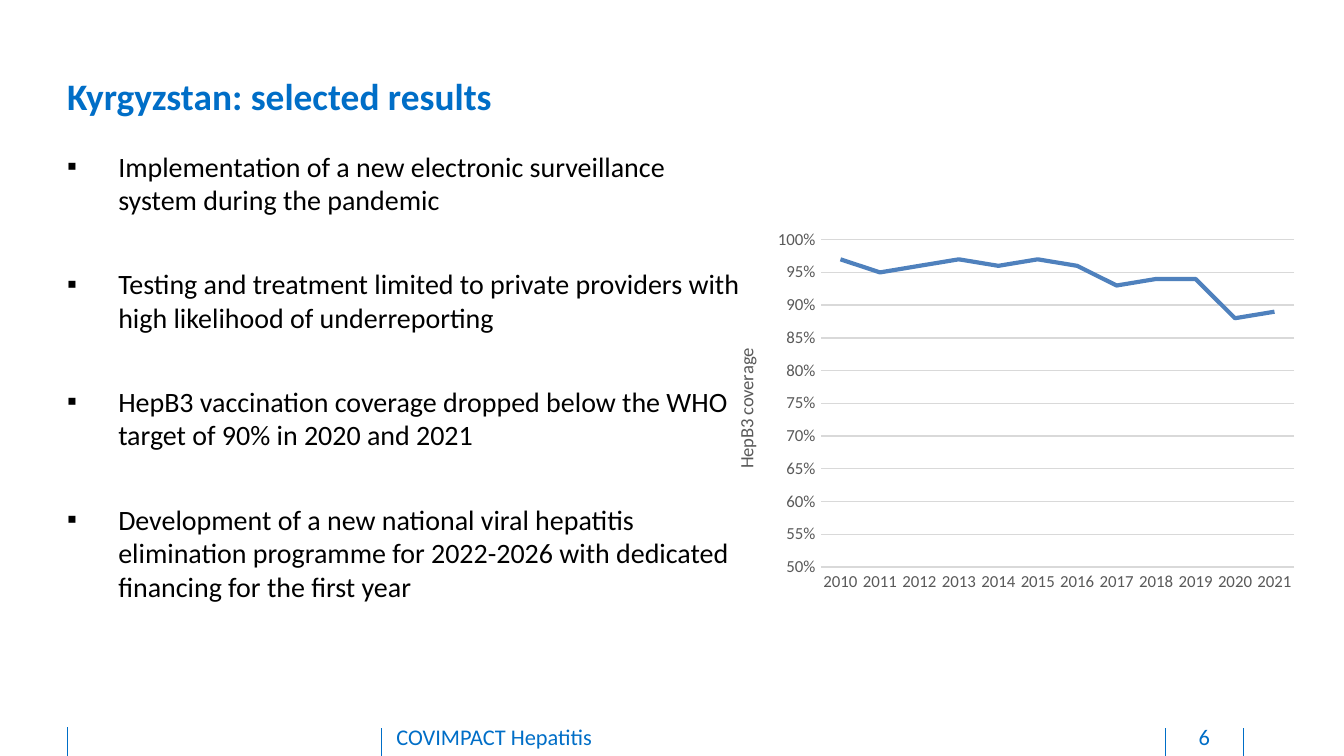
from lxml.etree import SubElement
from pptx import Presentation
from pptx.chart.data import CategoryChartData
from pptx.dml.color import RGBColor
from pptx.enum.chart import XL_CHART_TYPE, XL_TICK_MARK
from pptx.enum.shapes import MSO_CONNECTOR
from pptx.enum.text import MSO_ANCHOR, MSO_AUTO_SIZE, PP_ALIGN
from pptx.oxml import parse_xml
from pptx.oxml.ns import nsdecls, qn
from pptx.util import Inches, Pt

COLORS = {"accent": "006EC7", "text": "000000", "axis": "595959",
          "grid": "D9D9D9", "series": "4F81BD"}
FONT = "Calibri"

RESULTS = [
    "Implementation of a new electronic surveillance system during the pandemic",
    "Testing and treatment limited to private providers with high likelihood of underreporting",
    "HepB3 vaccination coverage dropped below the WHO target of 90% in 2020 and 2021",
    "Development of a new national viral hepatitis elimination programme for 2022-2026 "
    "with dedicated financing for the first year",
]
YEARS = [str(year) for year in range(2010, 2022)]
COVERAGE = [0.97, 0.95, 0.96, 0.97, 0.96, 0.97, 0.96, 0.93, 0.94, 0.94, 0.88, 0.89]


def rgb(name):
    return RGBColor.from_string(COLORS[name])


def set_layout(parent, index, **settings):
    """Give a chart part a manual layout as child number index."""
    for old in parent.findall(qn("c:layout")):
        parent.remove(old)
    layout = parse_xml(f"<c:layout {nsdecls('c')}><c:manualLayout/></c:layout>")
    for tag, value in settings.items():
        SubElement(layout[0], qn(f"c:{tag}")).set("val", str(value))
    parent.insert(index, layout)


class SlideBuilder:
    def __init__(self, slide):
        self.slide = slide

    def style(self, font, size, color, bold=False):
        font.name, font.size, font.bold = FONT, Pt(size), bold
        font.color.rgb = rgb(color)

    def place(self, shape, left, top, width, height):
        shape.left, shape.top = Inches(left), Inches(top)
        shape.width, shape.height = Inches(width), Inches(height)

    def prepare_frame(self, shape, anchor=MSO_ANCHOR.TOP, bottom=0):
        frame = shape.text_frame
        frame.word_wrap = True
        frame.auto_size = MSO_AUTO_SIZE.NONE
        frame.vertical_anchor = anchor
        frame.margin_left = frame.margin_top = frame.margin_right = 0
        frame.margin_bottom = Inches(bottom)
        return frame

    def add_run(self, paragraph, text, size, color, bold=False):
        run = paragraph.add_run()
        run.text = text
        self.style(run.font, size, color, bold)

    def title(self, text, *box):
        heading = self.slide.shapes.title
        self.place(heading, *box)
        paragraph = self.prepare_frame(heading).paragraphs[0]
        paragraph.alignment = PP_ALIGN.LEFT
        paragraph.line_spacing = Pt(21.5)
        self.add_run(paragraph, text, 20, "accent", bold=True)

    def bullets(self, items, *box):
        body = self.slide.placeholders[1]
        self.place(body, *box)
        frame = self.prepare_frame(body)
        for index, item in enumerate(items):
            paragraph = frame.add_paragraph() if index else frame.paragraphs[0]
            properties = paragraph._p.get_or_add_pPr()
            properties.set("marL", str(Inches(0.38)))
            properties.set("indent", str(-Inches(0.38)))
            SubElement(properties, qn("a:buChar")).set("char", "▪")
            paragraph.space_before = Pt(27 if index else 0)
            self.add_run(paragraph, item, 15, "text")

    def footer(self, text, *box, align=PP_ALIGN.LEFT):
        left, top, width, height = map(Inches, box)
        label = self.slide.shapes.add_textbox(left, top, width, height)
        paragraph = self.prepare_frame(label, bottom=0.05).paragraphs[0]
        paragraph.alignment = align
        self.add_run(paragraph, text, 12, "accent")

    def divider(self, x, top, bottom):
        line = self.slide.shapes.add_connector(
            MSO_CONNECTOR.STRAIGHT, Inches(x), Inches(top), Inches(x), Inches(bottom))
        line.line.color.rgb = rgb("accent")
        line.line.width = Pt(0.5)
        SubElement(line._element.spPr, qn("a:effectLst"))

    def line_chart(self, categories, values, axis_title, *box):
        data = CategoryChartData(number_format="0%")
        data.categories = categories
        data.add_series("Series 1", values)
        chart = self.slide.shapes.add_chart(
            XL_CHART_TYPE.LINE, *map(Inches, box), data).chart
        chart.has_legend = chart.has_title = False
        self.style(chart.font, 10, "text")
        plot = chart.plots[0]
        plot.vary_by_categories = False
        series = plot.series[0]
        series.smooth = False
        series.format.line.color.rgb = rgb("series")
        series.format.line.width = Pt(2.25)

        for axis in (chart.category_axis, chart.value_axis):
            axis.major_tick_mark = axis.minor_tick_mark = XL_TICK_MARK.NONE
            self.style(axis.tick_labels.font, 9, "axis")
        years, coverage = chart.category_axis, chart.value_axis
        coverage.minimum_scale, coverage.maximum_scale = 0.5, 1
        coverage.major_unit = 0.05
        coverage.tick_labels.number_format = "0%"
        coverage.tick_labels.number_format_is_linked = False
        coverage.format.line.fill.background()
        for line in (years.format.line, coverage.major_gridlines.format.line):
            line.color.rgb = rgb("grid")
            line.width = Pt(0.75)

        frame = coverage.axis_title.text_frame
        frame._txBody.bodyPr.set("rot", "-5400000")
        frame._txBody.bodyPr.set("vert", "horz")
        self.add_run(frame.paragraphs[0], axis_title, 10, "axis")
        set_layout(coverage.axis_title._element, 1,
                   xMode="edge", yMode="edge", x=0.04, y=0.33)
        set_layout(chart._chartSpace.chart.plotArea, 0, layoutTarget="inner",
                   xMode="edge", yMode="edge", x=0.19, y=0.06, w=0.79, h=0.84)


def main():
    presentation = Presentation()
    presentation.slide_width = Inches(10)
    presentation.slide_height = presentation.slide_width * 9 // 16
    builder = SlideBuilder(presentation.slides.add_slide(presentation.slide_layouts[1]))
    for x, top, bottom in [(0.5, 5.41, 5.63), (2.84, 5.42, 5.64),
                           (8.67, 5.42, 5.65), (9.25, 5.42, 5.65)]:
        builder.divider(x, top, bottom)
    builder.footer("6", 8.69, 5.38, 0.54, 0.21, align=PP_ALIGN.CENTER)
    builder.title("Kyrgyzstan: selected results", 0.5, 0.58, 8.73, 0.31)
    builder.bullets(RESULTS, 0.5, 1.11, 5.05, 4.11)
    builder.footer("COVIMPACT Hepatitis", 2.95, 5.38, 3.17, 0.21)
    builder.line_chart(YEARS, COVERAGE, "HepB3 coverage", 5.26, 1.61, 4.46, 2.9)
    presentation.save("out.pptx")


if __name__ == "__main__":
    main()
